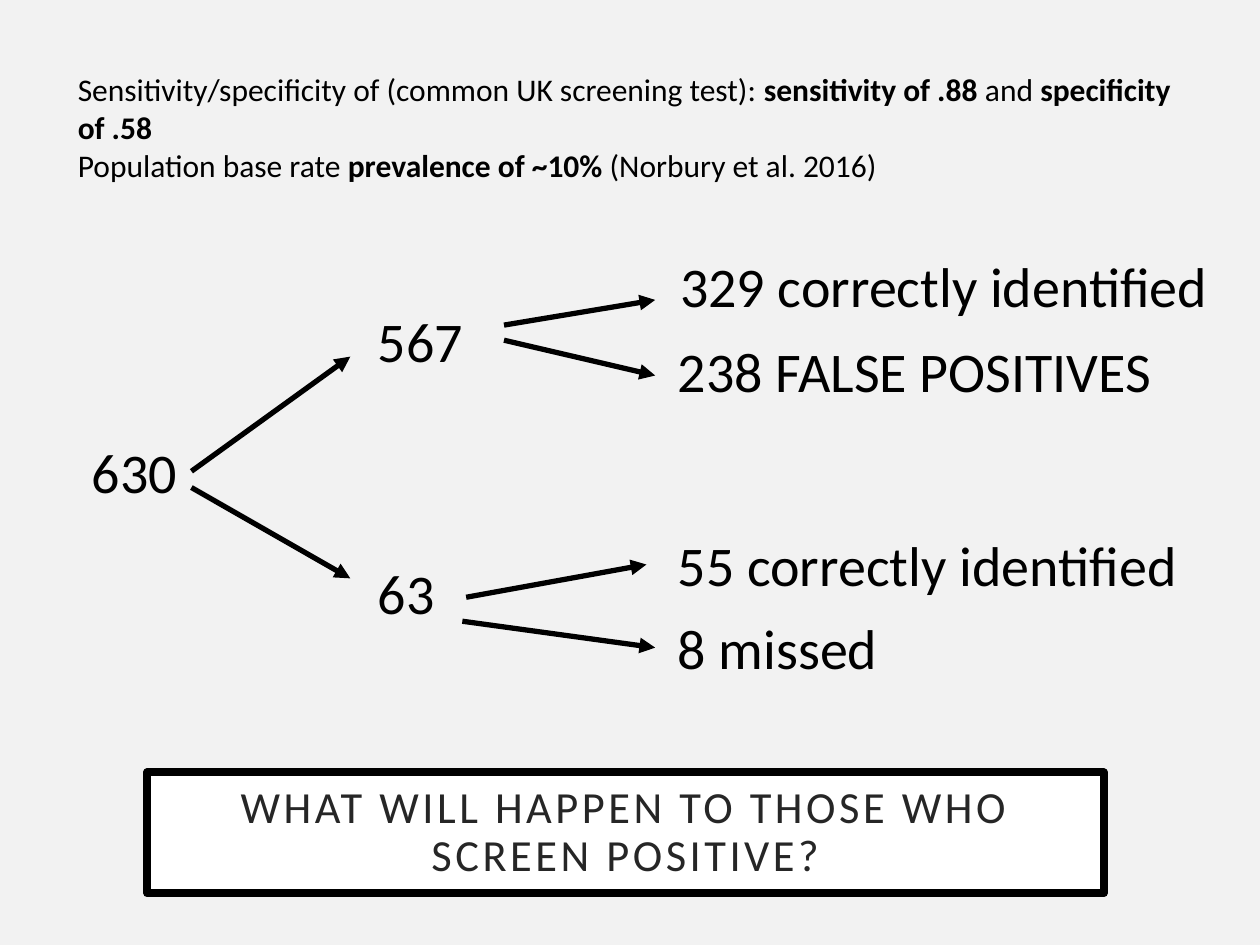
from lxml import etree
from pptx import Presentation
from pptx.dml.color import RGBColor
from pptx.enum.shapes import MSO_CONNECTOR, MSO_SHAPE
from pptx.enum.text import MSO_ANCHOR, PP_ALIGN
from pptx.oxml.ns import qn
from pptx.util import Pt

STRAIGHT, RECT = MSO_CONNECTOR.STRAIGHT, MSO_SHAPE.RECTANGLE
MIDDLE, CENTER = MSO_ANCHOR.MIDDLE, PP_ALIGN.CENTER
FONT = "Calibri"
COLORS = {"background": "F2F2F2", "ink": "000000", "box": "FFFFFF", "question": "262626"}

# Each line is a list of (text, bold) runs
HEADER = [
    [("Sensitivity/specificity of (common UK screening test): ", False),
     ("sensitivity of .88 ", True), ("and ", False), ("specificity of .58", True)],
    [("Population base rate ", False), ("prevalence of ~10% ", True),
     ("(Norbury et al. 2016)", False)],
]
# text, left, top, width, all relative to the tree
COUNTS = [
    ("630", 0, 105.8, 64),
    ("567", 163.4, 31, 64),
    ("63", 163.4, 175, 47.5),
    ("329 correctly identified", 336.2, 0, 338.4),
    ("238 FALSE POSITIVES", 334.8, 48.2, 288),
    ("55 correctly identified", 334.8, 159.1, 303),
    ("8 missed", 334.8, 206.6, 130),
]
# start x, start y, end x, end y, all relative to the tree
ARROWS = [
    (64, 128.9, 154.8, 63.4),
    (64, 138.2, 154.8, 190.1),
    (242.6, 45.4, 329, 31),
    (242.6, 54, 329, 74.2),
    (221, 200.9, 324, 182.2),
    (218.8, 214.6, 329, 229.7),
]


def rgb(name):
    return RGBColor.from_string(COLORS[name])


def set_font(p, size, color="ink"):
    p.font.name = FONT
    p.font.size = Pt(size)
    p.font.color.rgb = rgb(color)


def add_header(s, x, y, w, h):
    tf = s.shapes.add_textbox(Pt(x), Pt(y), Pt(w), Pt(h)).text_frame
    tf.word_wrap = True
    for i, line in enumerate(HEADER):
        p = tf.add_paragraph() if i else tf.paragraphs[0]
        set_font(p, 18)
        for text, bold in line:
            r = p.add_run()
            r.text = text
            r.font.bold = bold


def add_count(s, text, x, y, w):
    tf = s.shapes.add_textbox(Pt(x), Pt(y), Pt(w), Pt(46)).text_frame
    tf.word_wrap = False
    p = tf.paragraphs[0]
    p.text = text
    set_font(p, 32)


def add_arrow(s, x1, y1, x2, y2):
    line = s.shapes.add_connector(STRAIGHT, Pt(x1), Pt(y1), Pt(x2), Pt(y2))
    line.line.color.rgb = rgb("ink")
    line.line.width = Pt(3)
    etree.SubElement(line.line._get_or_add_ln(), qn("a:tailEnd"), type="triangle")
    etree.SubElement(line._element.spPr, qn("a:effectLst"))


def add_tree(s, x, y):
    for text, dx, dy, w in COUNTS:
        add_count(s, text, x + dx, y + dy, w)
    for x1, y1, x2, y2 in ARROWS:
        add_arrow(s, x + x1, y + y1, x + x2, y + y2)


def add_question(s, x, y, w, h):
    sp = s.shapes.add_shape(RECT, Pt(x), Pt(y), Pt(w), Pt(h))
    sp.shadow.inherit = False
    sp.fill.solid()
    sp.fill.fore_color.rgb = rgb("box")
    sp.line.color.rgb = rgb("ink")
    sp.line.width = Pt(4.5)
    etree.SubElement(sp.line._get_or_add_ln(), qn("a:round"))
    tf = sp.text_frame
    tf.word_wrap = True
    tf.vertical_anchor = MIDDLE
    p = tf.paragraphs[0]
    p.alignment = CENTER
    p.line_spacing = 0.9
    r = p.add_run()
    r.text = "WHAT WILL HAPPEN TO THOSE WHO SCREEN POSITIVE?"
    set_font(p, 25.4, "question")
    r.font._element.set("spc", "200")


def main():
    prs = Presentation()
    prs.slide_width, prs.slide_height = Pt(720), Pt(540)
    s = prs.slides.add_slide(prs.slide_layouts[6])
    s.background.fill.solid()
    s.background.fill.fore_color.rgb = rgb("background")
    add_header(s, 37.4, 36.7, 640, 72.7)
    add_tree(s, 45.4, 140.4)
    add_question(s, 84.2, 441.4, 546.5, 69.1)
    prs.save("out.pptx")


if __name__ == "__main__":
    main()
